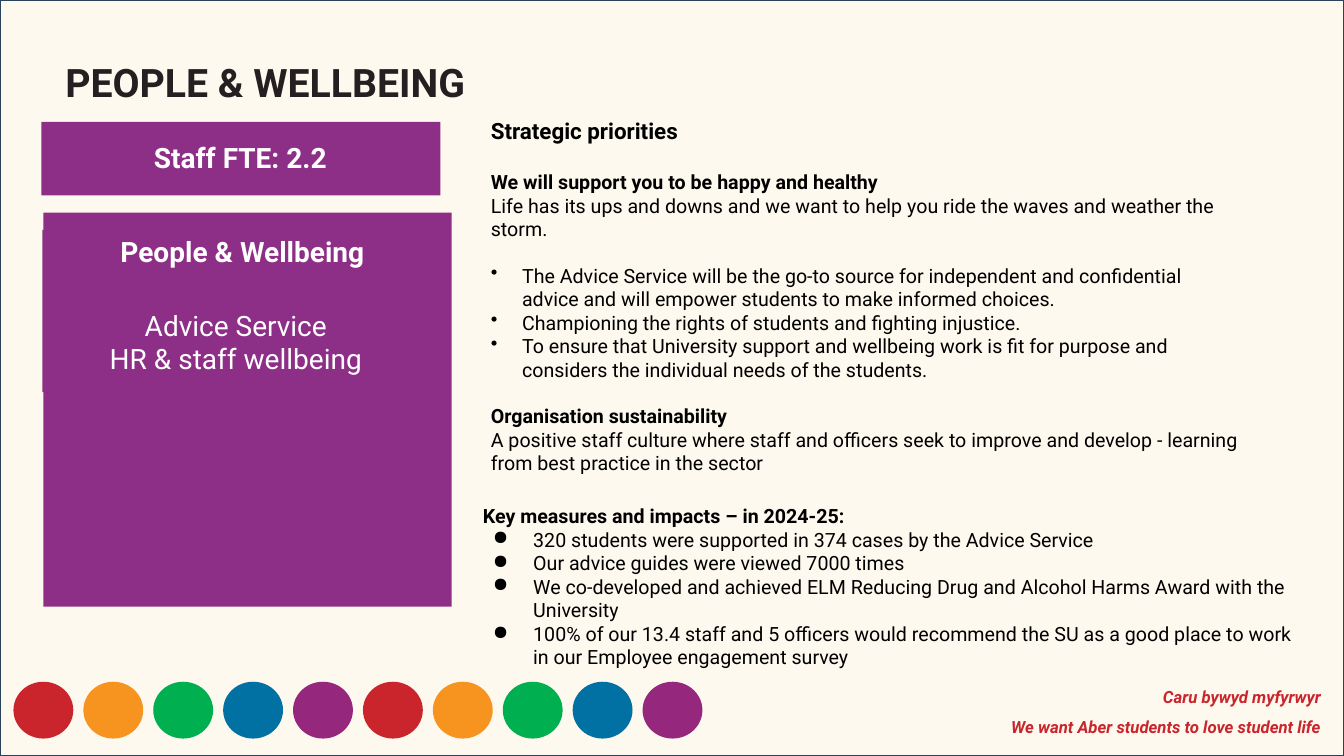
from dataclasses import dataclass

from lxml import etree
from pptx import Presentation
from pptx.dml.color import RGBColor
from pptx.enum.shapes import MSO_SHAPE
from pptx.enum.text import MSO_ANCHOR, PP_ALIGN
from pptx.oxml.ns import qn
from pptx.slide import Slide
from pptx.util import Inches, Pt

RECTANGLE = MSO_SHAPE.RECTANGLE
OVAL = MSO_SHAPE.OVAL
TOP = MSO_ANCHOR.TOP
LEFT = PP_ALIGN.LEFT
CENTER = PP_ALIGN.CENTER
RIGHT = PP_ALIGN.RIGHT


@dataclass(frozen=True)
class Theme:
    font: str = "Roboto"
    cream: str = "FEEECE"
    frame: str = "28445D"
    panel: str = "8D2F87"
    title: str = "242021"
    text: str = "000000"
    white: str = "FFFFFF"
    red: str = "CA252C"
    dots: tuple[str, ...] = ("CA252C", "F7941F", "00AF50", "0171A3", "95277D")
    title_size: int = 28
    panel_size: int = 20
    heading_size: int = 16
    body_size: int = 14
    footer_size: int = 12


THEME = Theme()


@dataclass(frozen=True)
class Area:
    left: float
    top: float
    width: float
    height: float


@dataclass(frozen=True)
class Bullet:
    symbol: str
    margin: float
    hanging: float


@dataclass(frozen=True)
class Para:
    text: str
    size: int = THEME.body_size
    color: str = THEME.text
    bold: bool = False
    italic: bool = False
    align: PP_ALIGN = LEFT
    before: float = 0
    spacing: float = 1.0
    bullet: Bullet | None = None
    right_margin: float = 0


@dataclass(frozen=True)
class TextBox:
    area: Area
    paras: tuple[Para, ...]
    vertical_inset: float = 0.05


def add_figure(page: Slide, kind: MSO_SHAPE, area: Area, fill: str,
               line: str | None = None, line_width: float = 1, opacity: int = 100) -> None:
    figure = page.shapes.add_shape(kind, Inches(area.left), Inches(area.top),
                                   Inches(area.width), Inches(area.height))
    figure.shadow.inherit = False
    figure.fill.solid()
    figure.fill.fore_color.rgb = RGBColor.from_string(fill)
    if opacity < 100:
        color = figure.fill._xPr.find(qn("a:solidFill"))[0]
        etree.SubElement(color, qn("a:alpha"), val=str(opacity * 1000))
    if line:
        figure.line.color.rgb = RGBColor.from_string(line)
        figure.line.width = Pt(line_width)
    else:
        figure.line.fill.background()


def add_text(page: Slide, box: TextBox) -> None:
    area = box.area
    frame = page.shapes.add_textbox(Inches(area.left), Inches(area.top),
                                    Inches(area.width), Inches(area.height)).text_frame
    frame.word_wrap = True
    frame.vertical_anchor = TOP
    frame.margin_left = frame.margin_right = Inches(0.1)
    frame.margin_top = frame.margin_bottom = Inches(box.vertical_inset)
    for index, para in enumerate(box.paras):
        paragraph = frame.add_paragraph() if index else frame.paragraphs[0]
        paragraph.text = para.text
        paragraph.alignment = para.align
        paragraph.line_spacing = para.spacing
        paragraph.space_before = Pt(para.before)
        properties = paragraph._p.get_or_add_pPr()
        if para.right_margin:
            properties.set("marR", str(Inches(para.right_margin)))
        if para.bullet:
            properties.set("marL", str(Inches(para.bullet.margin)))
            properties.set("indent", str(-Inches(para.bullet.hanging)))
            color = etree.SubElement(properties, qn("a:buClr"))
            etree.SubElement(color, qn("a:srgbClr"), val=THEME.text)
            etree.SubElement(properties, qn("a:buChar"), char=para.bullet.symbol)
        font = paragraph.font
        font.name = THEME.font
        font.size = Pt(para.size)
        font.bold = para.bold
        font.italic = para.italic
        font.color.rgb = RGBColor.from_string(para.color)


def panel_para(text: str, bold: bool = False, before: float = 0,
               spacing: float = 1.0, right_margin: float = 0) -> Para:
    return Para(text, THEME.panel_size, THEME.white, bold, align=CENTER,
                before=before, spacing=spacing, right_margin=right_margin)


def footer_para(text: str) -> Para:
    return Para(text, THEME.footer_size, THEME.red, True, True, RIGHT, spacing=1.5)


PRIORITY = Bullet("•", 0.31, 0.31)
MEASURE = Bullet("●", 0.5, 0.4)
BODY_GAP = 16.4
HEADING_GAP = 18.75

PANELS = (
    Area(0.43, 2.11, 4.05, 3.91),
    Area(0.42, 2.28, 3.97, 1.61),
    Area(0.41, 1.21, 3.96, 0.73),
)

TEXT_BOXES = (
    TextBox(Area(6.67, 6.66, 6.53, 0.67), (
        footer_para("Caru bywyd myfyrwyr"),
        footer_para("We want Aber students to love student life"),
    )),
    TextBox(Area(0.55, 0.53, 4.86, 1.04), (
        Para("PEOPLE & WELLBEING", THEME.title_size, THEME.title, True),
    )),
    TextBox(Area(0.42, 2.28, 3.97, 1.61), (
        panel_para("People & Wellbeing", bold=True),
        panel_para("Advice Service", before=28.5, right_margin=0.13),
        panel_para("HR & staff wellbeing"),
    )),
    TextBox(Area(0.4, 1.38, 3.97, 0.4), (
        panel_para("Staff FTE: 2.2", bold=True, spacing=0.9),
    )),
    TextBox(Area(4.69, 4.9, 8.38, 2.71), (
        Para("Key measures and impacts – in 2024-25:", bold=True),
        Para("320 students were supported in 374 cases by the Advice Service", bullet=MEASURE),
        Para("Our advice guides were viewed 7000 times", bullet=MEASURE),
        Para("We co-developed and achieved ELM Reducing Drug and Alcohol Harms Award "
             "with the University", bullet=MEASURE),
        Para("100% of our 13.4 staff and 5 officers would recommend the SU as a good place "
             "to work in our Employee engagement survey", bullet=MEASURE),
    ), 0.1),
    TextBox(Area(4.77, 1.06, 7.64, 2.37), (
        Para("Strategic priorities", THEME.heading_size, bold=True),
        Para("We will support you to be happy and healthy", bold=True, before=HEADING_GAP),
        Para("Life has its ups and downs and we want to help you ride the waves "
             "and weather the storm."),
        Para("The Advice Service will be the go-to source for independent and confidential "
             "advice and will empower students to make informed choices.",
             before=BODY_GAP, bullet=PRIORITY),
        Para("Championing the rights of students and fighting injustice.", bullet=PRIORITY),
        Para("To ensure that University support and wellbeing work is fit for purpose and "
             "considers the individual needs of the students.", bullet=PRIORITY),
        Para("Organisation sustainability", bold=True, before=BODY_GAP),
        Para("A positive staff culture where staff and officers seek to improve and develop "
             "- learning from best practice in the sector"),
    ), 0.1),
)


def main() -> None:
    deck = Presentation()
    deck.slide_width = Inches(13.33)
    deck.slide_height = Inches(7.5)
    page = deck.slides.add_slide(deck.slide_layouts[6])
    add_figure(page, RECTANGLE, Area(0, 0, 13.33, 7.5), THEME.cream, THEME.frame, 2, 33)
    for index, color in enumerate(THEME.dots * 2):
        left = 0.14 + index * 6.24 / 9
        add_figure(page, OVAL, Area(left, 6.77, 0.58, 0.55), color, color)
    for panel in PANELS:
        add_figure(page, RECTANGLE, panel, THEME.panel)
    for box in TEXT_BOXES:
        add_text(page, box)
    deck.save("out.pptx")


if __name__ == "__main__":
    main()
